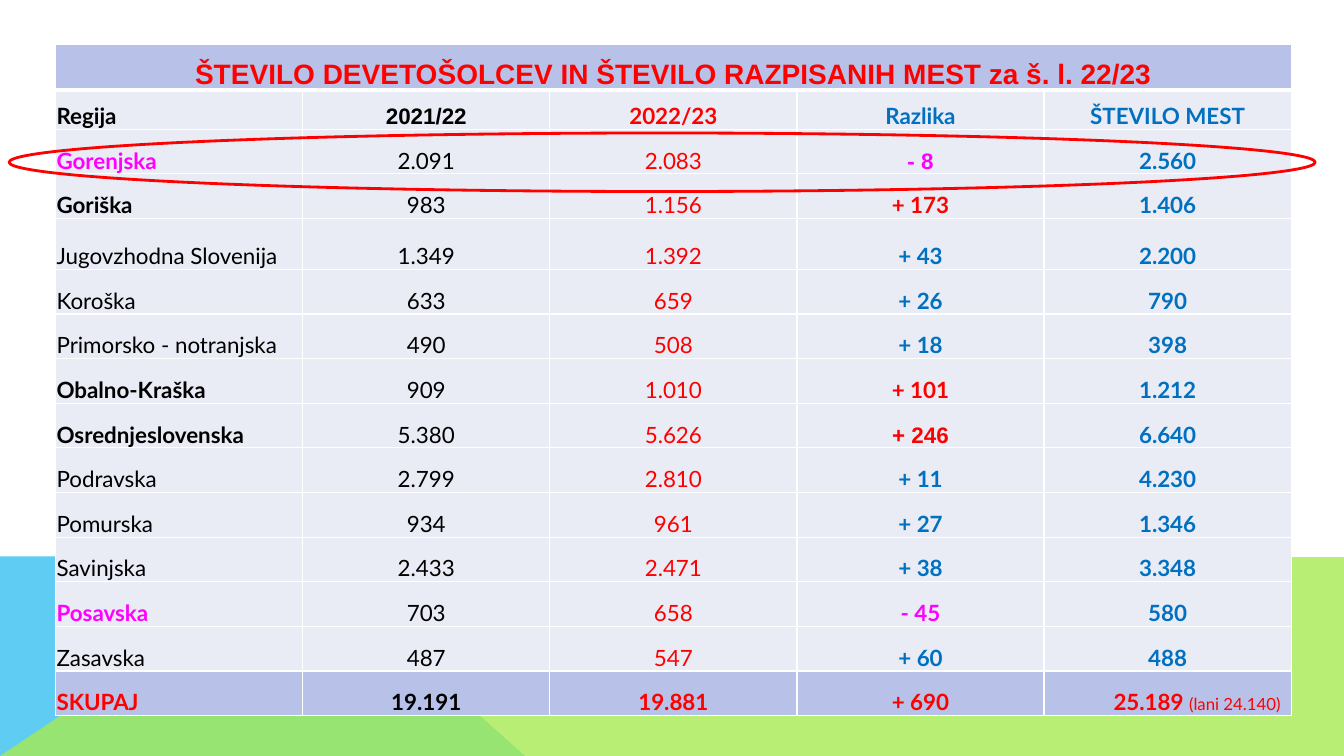
from lxml import etree
from pptx import Presentation
from pptx.dml.color import RGBColor
from pptx.enum.shapes import MSO_SHAPE
from pptx.enum.text import MSO_ANCHOR, PP_ALIGN
from pptx.oxml.ns import qn
from pptx.util import Pt

OVAL = MSO_SHAPE.OVAL
LOW = MSO_ANCHOR.BOTTOM
LEFT, MID, RIGHT = PP_ALIGN.LEFT, PP_ALIGN.CENTER, PP_ALIGN.RIGHT

HUES = {
    "sky": "5ECCF3", "lime": "A7EA52", "band": "B8C2E9", "pale": "E9EBF5",
    "white": "FFFFFF", "black": "000000", "red": "FF0000",
    "blue": "0070C0", "pink": "FF00FF",
}

TITLE = "ŠTEVILO DEVETOŠOLCEV IN ŠTEVILO RAZPISANIH MEST za š. l. 22/23"
HEAD = ["Regija", "2021/22", "2022/23", "Razlika", "ŠTEVILO MEST"]
DATA = [
    ["Gorenjska", "2.091", "2.083", "- 8", "2.560"],
    ["Goriška", "983", "1.156", "+ 173", "1.406"],
    ["Jugovzhodna Slovenija", "1.349", "1.392", "+ 43", "2.200"],
    ["Koroška", "633", "659", "+ 26", "790"],
    ["Primorsko - notranjska", "490", "508", "+ 18", "398"],
    ["Obalno-Kraška", "909", "1.010", "+ 101", "1.212"],
    ["Osrednjeslovenska", "5.380", "5.626", "+ 246", "6.640"],
    ["Podravska", "2.799", "2.810", "+ 11", "4.230"],
    ["Pomurska", "934", "961", "+ 27", "1.346"],
    ["Savinjska", "2.433", "2.471", "+ 38", "3.348"],
    ["Posavska", "703", "658", "- 45", "580"],
    ["Zasavska", "487", "547", "+ 60", "488"],
]
TOTAL = ["SKUPAJ", "19.191", "19.881", "+ 690", "25.189 "]
ARIAL = {"2021/22", "- 8", "+ 246"}
HIGHS = [32.4, 28, 31.88, 31.88, 36.5] + [31.88] * 10


class Deck:
    def __init__(self, wide, high):
        self.prs = Presentation()
        self.prs.slide_width, self.prs.slide_height = Pt(wide), Pt(high)
        self.slide = self.prs.slides.add_slide(self.prs.slide_layouts[6])
        self.shapes = self.slide.shapes

    def rgb(self, hue):
        return RGBColor.from_string(HUES[hue])

    def paint(self, item, hue):
        item.fill.solid()
        item.fill.fore_color.rgb = self.rgb(hue)

    def poly(self, spots, hue, alpha=None):
        spots = [(Pt(x), Pt(y)) for x, y in spots]
        path = self.shapes.build_freeform(*spots[0], scale=1.0)
        path.add_line_segments(spots[1:], close=True)
        form = path.convert_to_shape()
        form.shadow.inherit = False
        form.line.fill.background()
        self.paint(form, hue)
        if alpha:
            tint = form._element.spPr.find(".//" + qn("a:srgbClr"))
            etree.SubElement(tint, qn("a:alpha"), val=str(alpha * 1000))

    def ring(self, left, top, wide, high, hue, width):
        oval = self.shapes.add_shape(OVAL, Pt(left), Pt(top), Pt(wide), Pt(high))
        oval.shadow.inherit = False
        oval.fill.background()
        oval.line.color.rgb = self.rgb(hue)
        oval.line.width = Pt(width)

    def table(self, left, top, wide, highs, cols):
        frame = self.shapes.add_table(
            len(highs), cols, Pt(left), Pt(top), Pt(wide), Pt(sum(highs)))
        grid = frame.table
        grid.first_row = grid.horz_banding = False
        for col in grid.columns:
            col.width = Pt(wide / cols)
        for row, high in zip(grid.rows, highs):
            row.height = Pt(high)
        return grid

    def edge(self, cell, top, base):
        props = cell._tc.get_or_add_tcPr()
        sides = [("L", 1), ("R", 1), ("T", top), ("B", base)]
        for spot, (side, width) in enumerate(sides):
            line = etree.Element(qn("a:ln" + side), w=str(Pt(width)))
            fill = etree.SubElement(line, qn("a:solidFill"))
            etree.SubElement(fill, qn("a:srgbClr"), val=HUES["white"])
            props.insert(spot, line)

    def cell(self, cell, fill, top=1, base=1):
        cell.vertical_anchor = LOW
        cell.margin_left = cell.margin_right = cell.margin_top = Pt(0.72)
        cell.margin_bottom = 0
        self.paint(cell, fill)
        self.edge(cell, top, base)

    def style(self, run, hue, bold, size=16, face="Lato"):
        font = run.font
        font.name, font.size, font.bold = face, Pt(size), bold
        font.color.rgb = self.rgb(hue)

    def text(self, cell, text, hue, bold, align, size=16, face="Lato"):
        cell.text_frame.text = text
        para = cell.text_frame.paragraphs[0]
        para.alignment = align
        self.style(para.runs[0], hue, bold, size, face)
        return para


def looks(row):
    if row is HEAD:
        return [(hue, True) for hue in ("black", "black", "red", "blue", "blue")]
    if row is TOTAL:
        return [(hue, True) for hue in ("red", "black", "red", "red", "red")]
    gap = int(row[3].replace(" ", ""))
    if gap < 0:
        name, diff = ("pink", True), "pink"
    elif gap > 100:
        name, diff = ("black", True), "red"
    else:
        name, diff = ("black", False), "blue"
    return [name, ("black", False), ("red", False), (diff, True), ("blue", True)]


def main():
    deck = Deck(960, 540)
    deck.poly([(0, 540), (0, 397.4), (214.6, 397.4), (375.1, 540)], "sky")
    deck.poly([(0, 540), (213.8, 397.4), (960, 398), (960, 540)], "lime", 80)

    grid = deck.table(39.7, 31.9, 882.7, HIGHS, len(HEAD))
    for cell in grid.rows[0].cells:
        deck.cell(cell, "band", base=3)
    title = grid.cell(0, 0)
    title.merge(grid.cell(0, len(HEAD) - 1))
    deck.text(title, TITLE, "red", True, MID, 20, "Arial")

    for r, row in enumerate([HEAD, *DATA, TOTAL], 1):
        fill = "band" if row is TOTAL else "pale"
        for c, (text, (hue, bold)) in enumerate(zip(row, looks(row))):
            cell = grid.cell(r, c)
            deck.cell(cell, fill, top=3 if row is HEAD else 1)
            face = "Arial" if text in ARIAL else "Lato"
            deck.text(cell, text, hue, bold, MID if c else LEFT, face=face)

    grid.cell(1, 1).text_frame.paragraphs[0].line_spacing = 1.15
    last = grid.cell(len(HIGHS) - 1, len(HEAD) - 1)
    last.margin_right = Pt(7.5)
    para = last.text_frame.paragraphs[0]
    para.alignment = RIGHT
    note = para.add_run()
    note.text = "(lani 24.140)"
    deck.style(note, "red", False, 12)

    deck.ring(6.5, 95, 933, 41.8, "red", 2)
    deck.prs.save("out.pptx")


if __name__ == "__main__":
    main()
